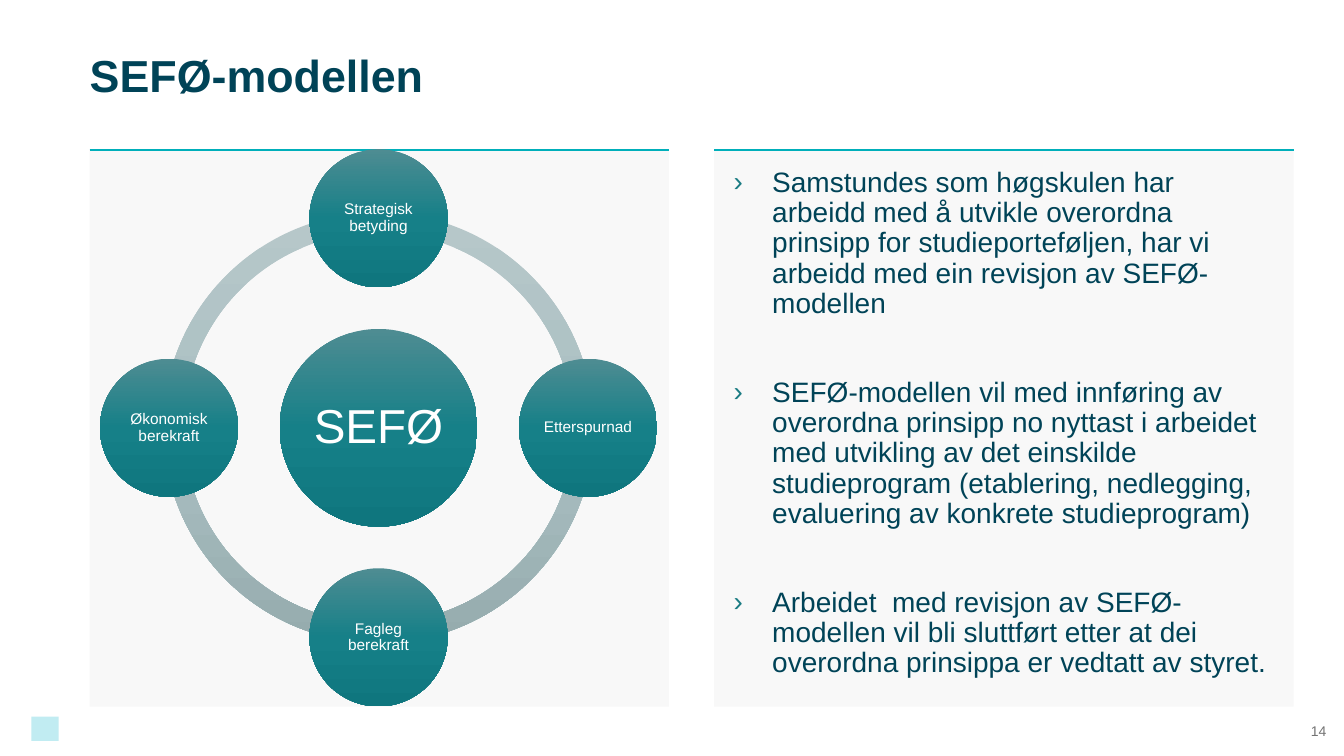
import copy
import math

import pptx
import pptx.dml.color
import pptx.enum.shapes
import pptx.enum.text
import pptx.oxml.ns
import pptx.oxml.xmlchemy
import pptx.util
from lxml import etree

Cm = pptx.util.Cm
Pt = pptx.util.Pt
RGBColor = pptx.dml.color.RGBColor
SHAPE = pptx.enum.shapes.MSO_SHAPE
ALIGN = pptx.enum.text.PP_ALIGN
ANCHOR = pptx.enum.text.MSO_ANCHOR
qn = pptx.oxml.ns.qn

FONT = "Arial"
NAVY = RGBColor(0x00, 0x43, 0x57)
TURQUOISE = RGBColor(0x00, 0xAF, 0xBA)
BULLET_TEAL = RGBColor(0x1B, 0x7C, 0x83)
PANEL_GRAY = RGBColor(0xF2, 0xF2, 0xF2)
NUMBER_GRAY = RGBColor(0x73, 0x73, 0x73)
MARK_BLUE = RGBColor(0xC1, 0xEC, 0xF2)
WHITE = RGBColor(0xFF, 0xFF, 0xFF)
CIRCLE_SHADES = [RGBColor(0x4E, 0x8C, 0x92), RGBColor(0x16, 0x80, 0x88),
                 RGBColor(0x0F, 0x76, 0x7E)]
RING_SHADES = [RGBColor(0xB6, 0xC7, 0xC9), RGBColor(0xAB, 0xC0, 0xC3),
               RGBColor(0x96, 0xAC, 0xAE)]

PANEL_LEFTS = (2.26, 18)
PANEL_TOP, PANEL_WIDTH, PANEL_HEIGHT = 3.76, 14.6, 14.05
CENTER_X, CENTER_Y = 9.54, 10.78
RING_SIZE, HUB_SIZE, FACTOR_SIZE, ORBIT = 10.85, 4.98, 3.48, 5.28
QUARTER = 54  # 90 degrees in adjustment units

# Clockwise from the top
FACTORS = ["Strategisk betyding", "Etterspurnad",
           "Fagleg berekraft", "Økonomisk berekraft"]
POINTS = [
    "Samstundes som høgskulen har arbeidd med å utvikle overordna prinsipp "
    "for studieporteføljen, har vi arbeidd med ein revisjon av SEFØ-modellen",
    "SEFØ-modellen vil med innføring av overordna prinsipp no nyttast i "
    "arbeidet med utvikling av det einskilde studieprogram (etablering, "
    "nedlegging, evaluering av konkrete studieprogram)",
    "Arbeidet  med revisjon av SEFØ-modellen vil bli sluttført etter at dei "
    "overordna prinsippa er vedtatt av styret.",
]


def place(shape, left, top, width, height):
    shape.left, shape.top = Cm(left), Cm(top)
    shape.width, shape.height = Cm(width), Cm(height)


def set_frame(frame, inset, anchor):
    frame.word_wrap = True
    frame.auto_size = pptx.enum.text.MSO_AUTO_SIZE.NONE
    frame.vertical_anchor = anchor
    frame.margin_left = frame.margin_right = Cm(inset)
    frame.margin_top = frame.margin_bottom = Cm(inset)


def format_paragraph(paragraph, size, color, align, bold=False):
    paragraph.alignment = align
    for run in paragraph.runs:
        run.font.name = FONT
        run.font.size = Pt(size)
        run.font.bold = bold
        run.font.color.rgb = color


def add_plain_shape(slide, preset, left, top, width, height):
    shape = slide.shapes.add_shape(
        preset, Cm(left), Cm(top), Cm(width), Cm(height))
    shape.shadow.inherit = False
    shape.line.fill.background()
    return shape


def fill_solid(shape, color):
    shape.fill.solid()
    shape.fill.fore_color.rgb = color


def fill_downward(shape, shades):
    shape.fill.gradient()
    shape.fill.gradient_angle = 270
    stop_list = shape._element.spPr.find(".//" + qn("a:gsLst"))
    stop_list.insert(1, copy.deepcopy(stop_list[0]))
    for stop, shade, position in zip(shape.fill.gradient_stops, shades, (0, 0.5, 1)):
        stop.color.rgb = shade
        stop.position = position


def add_panel(slide, left):
    panel = add_plain_shape(slide, SHAPE.RECTANGLE, left, PANEL_TOP,
                            PANEL_WIDTH, PANEL_HEIGHT)
    fill_solid(panel, PANEL_GRAY)
    gray = panel._element.spPr.find(".//" + qn("a:srgbClr"))
    etree.SubElement(gray, qn("a:alpha"), val="50000")

    rule = slide.shapes.add_connector(
        pptx.enum.shapes.MSO_CONNECTOR.STRAIGHT,
        Cm(left), Cm(3.78), Cm(left + PANEL_WIDTH), Cm(3.78))
    rule.line.color.rgb = TURQUOISE
    rule.line.width = Pt(2)
    etree.SubElement(rule._element.spPr, qn("a:effectLst"))


def fill_title(slide):
    title = slide.shapes.title
    slide.shapes._spTree.append(title._element)  # in front of the panels
    place(title, 2.26, 0, 30.35, 3.76)
    title.text_frame.text = "SEFØ-modellen"
    set_frame(title.text_frame, 0, ANCHOR.MIDDLE)
    format_paragraph(title.text_frame.paragraphs[0], 32, NAVY, ALIGN.LEFT, True)


def add_bullet(paragraph):
    properties = paragraph._p.get_or_add_pPr()
    properties.set("marL", str(Cm(0.97)))
    properties.set("indent", str(-Cm(0.97)))
    color = etree.SubElement(properties, qn("a:buClr"))
    etree.SubElement(color, qn("a:srgbClr"), val=str(BULLET_TEAL))
    etree.SubElement(properties, qn("a:buFont"), typeface=FONT)
    etree.SubElement(properties, qn("a:buChar"), char="›")


def fill_points(slide):
    body = slide.placeholders[1]
    slide.shapes._spTree.append(body._element)
    place(body, 17.98, 3.73, 14.6, 14.07)
    body.text_frame.text = "\n".join(POINTS)
    set_frame(body.text_frame, 0.51, ANCHOR.TOP)
    for index, paragraph in enumerate(body.text_frame.paragraphs):
        format_paragraph(paragraph, 20, NAVY, ALIGN.LEFT)
        paragraph.line_spacing = 0.9
        paragraph.space_before = Pt(42 if index else 0)
        add_bullet(paragraph)


def add_page_number(slide):
    number = slide.shapes.add_textbox(Cm(32.61), Cm(17.81), Cm(1.24), Cm(1.24))
    number.text_frame.text = "14"
    set_frame(number.text_frame, 0, ANCHOR.MIDDLE)
    paragraph = number.text_frame.paragraphs[0]
    format_paragraph(paragraph, 10, NUMBER_GRAY, ALIGN.CENTER)
    paragraph.space_after = Pt(6)


def add_ring(slide):
    for quarter in range(4):
        arc = add_plain_shape(
            slide, SHAPE.BLOCK_ARC, CENTER_X - RING_SIZE / 2,
            CENTER_Y - RING_SIZE / 2, RING_SIZE, RING_SIZE)
        arc.adjustments[0] = quarter * QUARTER
        arc.adjustments[1] = (quarter + 1) % 4 * QUARTER
        arc.adjustments[2] = 0.046
        fill_downward(arc, RING_SHADES)


def add_circle(slide, text, x, y, diameter, size):
    circle = add_plain_shape(slide, SHAPE.OVAL, x - diameter / 2,
                             y - diameter / 2, diameter, diameter)
    fill_downward(circle, CIRCLE_SHADES)
    circle.text_frame.text = text
    set_frame(circle.text_frame, 0.05, ANCHOR.MIDDLE)
    paragraph = circle.text_frame.paragraphs[0]
    format_paragraph(paragraph, size, WHITE, ALIGN.CENTER)
    paragraph.line_spacing = 0.9


def add_model(slide):
    add_ring(slide)
    add_circle(slide, "SEFØ", CENTER_X, CENTER_Y, HUB_SIZE, 34)
    for index, factor in enumerate(FACTORS):
        angle = index * math.pi / 2
        add_circle(slide, factor, CENTER_X + ORBIT * math.sin(angle),
                   CENTER_Y - ORBIT * math.cos(angle), FACTOR_SIZE, 11)


def main():
    presentation = pptx.Presentation()
    presentation.slide_width, presentation.slide_height = Cm(33.87), Cm(19.05)
    slide = presentation.slides.add_slide(presentation.slide_layouts[1])

    # Panels and corner mark
    for left in PANEL_LEFTS:
        add_panel(slide, left)
    mark = add_plain_shape(slide, SHAPE.RECTANGLE, 0.79, 18.06, 0.69, 0.61)
    fill_solid(mark, MARK_BLUE)

    # Text
    fill_title(slide)
    fill_points(slide)
    add_page_number(slide)

    # Circle model
    add_model(slide)
    presentation.save("out.pptx")


if __name__ == "__main__":
    main()
